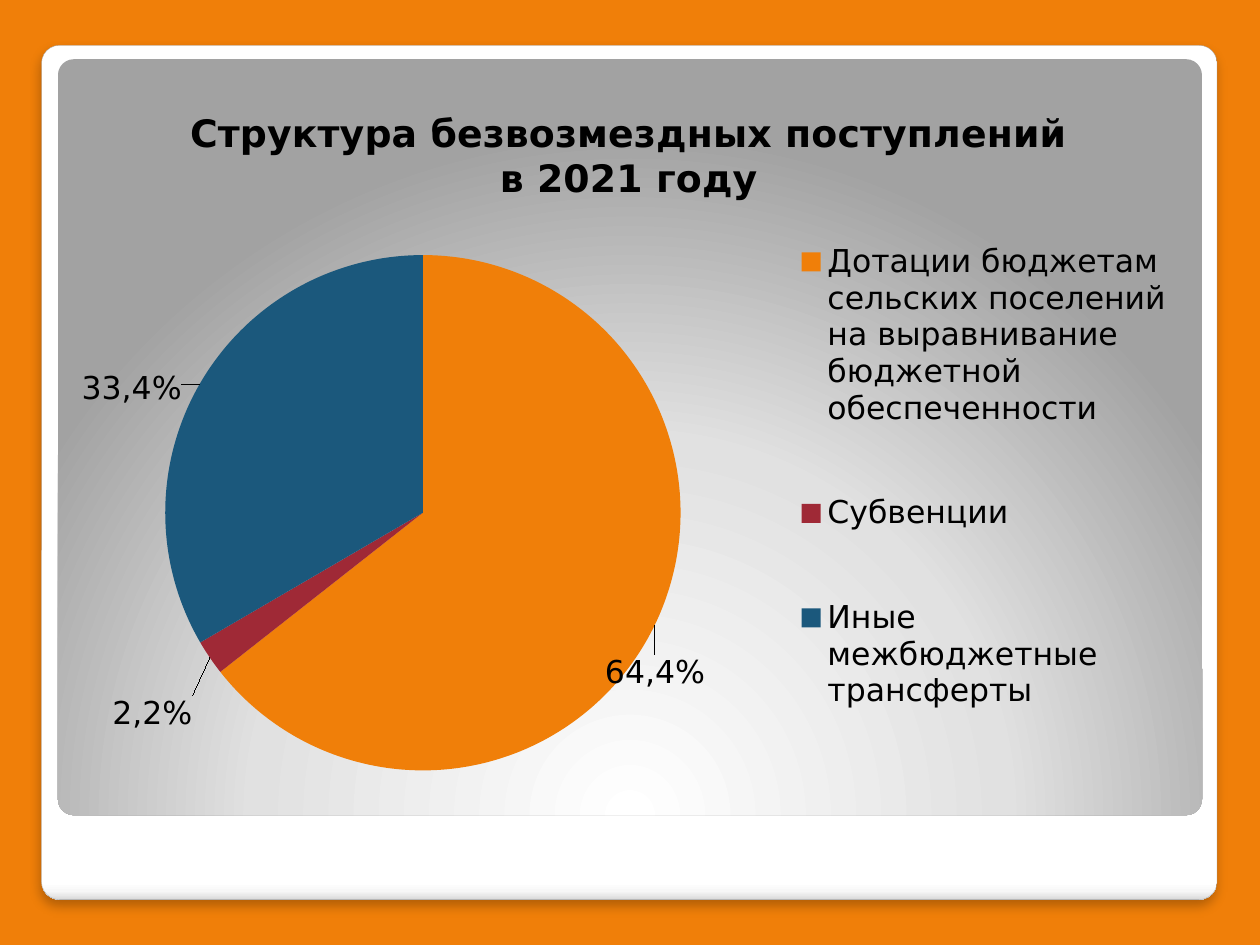
from lxml.etree import SubElement
from pptx import Presentation
from pptx.chart.data import CategoryChartData
from pptx.dml.color import RGBColor
from pptx.enum.chart import XL_CHART_TYPE, XL_LABEL_POSITION, XL_LEGEND_POSITION
from pptx.enum.shapes import MSO_SHAPE
from pptx.oxml import parse_xml
from pptx.oxml.ns import nsdecls, qn
from pptx.util import Pt

FONT = "DejaVu Sans"
TITLE = "Структура безвозмездных поступлений в 2021 году"
SLICES = [
    ("Дотации бюджетам сельских поселений на выравнивание бюджетной обеспеченности",
     64.4, "F07F09", (-0.05, 0.035)),
    ("Субвенции", 2.2, "9F2936", (-0.01, 0.045)),
    ("Иные межбюджетные трансферты", 33.4, "1B587C", (-0.01, 0.035)),
]
FRAME_BOX = (23.76, 25.92, 671.76, 488.16)
PANEL_BOX = (33.12, 33.84, 653.76, 432)
CHART_BOX = (33.84, 40.32, 644.4, 429.84)
FRAME_STOPS = [(0, "FFFFFF"), (98, "FFFFFF"), (99, "F7F7F7"), (100, "DADADA")]
PANEL_STOPS = [(0, "FFFFFF"), (55, "E1E1E1"), (100, "A2A2A2")]
LINEAR_DOWN = '<a:lin ang="5400000" scaled="0"/>'
CIRCLE_BELOW = ('<a:path path="circle"><a:fillToRect l="50000" t="175000" '
                'r="50000" b="-75000"/></a:path>')


def color(value):
    """Return the colour for a hex string."""
    return RGBColor.from_string(value)


def add_card(slide, box, stops, direction):
    """Add a rounded rectangle with a gradient fill."""
    shape = slide.shapes.add_shape(MSO_SHAPE.ROUNDED_RECTANGLE, *map(Pt, box))
    shape.adjustments[0] = 0.021
    shape.shadow.inherit = False
    shape.line.fill.background()
    shape.fill.gradient()
    stop_xml = "".join(
        f'<a:gs pos="{position * 1000}"><a:srgbClr val="{value}"/></a:gs>'
        for position, value in stops)
    gradient = parse_xml(f'<a:gradFill {nsdecls("a")} rotWithShape="1">'
                         f'<a:gsLst>{stop_xml}</a:gsLst>{direction}</a:gradFill>')
    properties = shape.element.spPr
    properties.replace(properties.find(qn("a:gradFill")), gradient)
    return shape


def add_shadow(shape):
    """Put a soft shadow below a shape."""
    effects = shape.element.spPr.find(qn("a:effectLst"))
    effects.append(parse_xml(
        f'<a:outerShdw {nsdecls("a")} blurRad="{Pt(6)}" dist="{Pt(4)}" dir="5400000" '
        'algn="t" rotWithShape="0"><a:srgbClr val="000000"><a:alpha val="25000"/>'
        '</a:srgbClr></a:outerShdw>'))


def set_layout(parent, predecessor, **values):
    """Place a chart part by hand, as fractions of the chart."""
    for old in parent.findall(qn("c:layout")):
        parent.remove(old)
    layout = parse_xml(f'<c:layout {nsdecls("c")}><c:manualLayout/></c:layout>')
    for tag, value in values.items():
        SubElement(layout[0], qn(f"c:{tag}")).set("val", str(value))
    if predecessor is None:
        parent.insert(0, layout)
    else:
        parent.find(qn(predecessor)).addnext(layout)


def add_pie(slide):
    """Add the pie chart with its title, legend and labels."""
    data = CategoryChartData(number_format="0.0")
    data.categories = [name for name, *_ in SLICES]
    data.add_series("Series 1", [share for _, share, *_ in SLICES])
    chart = slide.shapes.add_chart(XL_CHART_TYPE.PIE, *map(Pt, CHART_BOX), data).chart
    chart.font.name = FONT
    chart.font.size = Pt(18)
    chart.font.color.rgb = color("000000")

    chart.has_title = True
    chart.chart_title.text_frame.text = TITLE
    title_font = chart.chart_title.text_frame.paragraphs[0].font
    title_font.name = FONT
    title_font.size = Pt(21.6)
    title_font.bold = True
    title_font.color.rgb = color("000000")

    chart.has_legend = True
    chart.legend.position = XL_LEGEND_POSITION.RIGHT
    chart.legend.include_in_layout = False

    plot = chart.plots[0]
    plot.vary_by_categories = True
    plot.has_data_labels = True
    labels = plot.series[0].data_labels
    labels.show_value = True
    labels.position = XL_LABEL_POSITION.OUTSIDE_END
    for index, (_, share, fill, _) in enumerate(SLICES):
        point = plot.series[0].points[index]
        point.format.fill.solid()
        point.format.fill.fore_color.rgb = color(fill)
        label = point.data_label
        label.text_frame.text = f"{share}%".replace(".", ",")
        label_font = label.text_frame.paragraphs[0].font
        label_font.name = FONT
        label_font.size = Pt(18)
        label_font.color.rgb = color("000000")
        label.position = XL_LABEL_POSITION.OUTSIDE_END

    root = chart.element
    for element, (*_, (x, y)) in zip(root.iter(qn("c:dLbl")), SLICES):
        set_layout(element, "c:idx", x=x, y=y)
    for element in root.iter(qn("c:showLeaderLines")):
        element.set("val", "1")
    for group in root.iter(qn("c:dLbls")):
        if group.find(qn("c:showLeaderLines")) is None:
            SubElement(group, qn("c:showLeaderLines")).set("val", "1")
    set_layout(next(root.iter(qn("c:title"))), "c:tx",
               xMode="edge", yMode="edge", x=0.11, y=0.04)
    set_layout(next(root.iter(qn("c:plotArea"))), None, layoutTarget="inner",
               xMode="edge", yMode="edge", x=0.094, y=0.245, w=0.457, h=0.686)
    set_layout(next(root.iter(qn("c:legend"))), "c:legendPos",
               xMode="edge", yMode="edge", x=0.65, y=0.14, w=0.34, h=0.8)


def main():
    """Build the slide and save it."""
    presentation = Presentation()
    presentation.slide_width, presentation.slide_height = Pt(720), Pt(540)
    slide = presentation.slides.add_slide(presentation.slide_layouts[6])
    slide.background.fill.solid()
    slide.background.fill.fore_color.rgb = color("F07F09")
    frame = add_card(slide, FRAME_BOX, FRAME_STOPS, LINEAR_DOWN)
    frame.line.color.rgb = color("A4A4A4")
    frame.line.width = Pt(0.16)
    add_shadow(frame)
    add_card(slide, PANEL_BOX, PANEL_STOPS, CIRCLE_BELOW)
    add_pie(slide)
    presentation.save("out.pptx")


if __name__ == "__main__":
    main()
